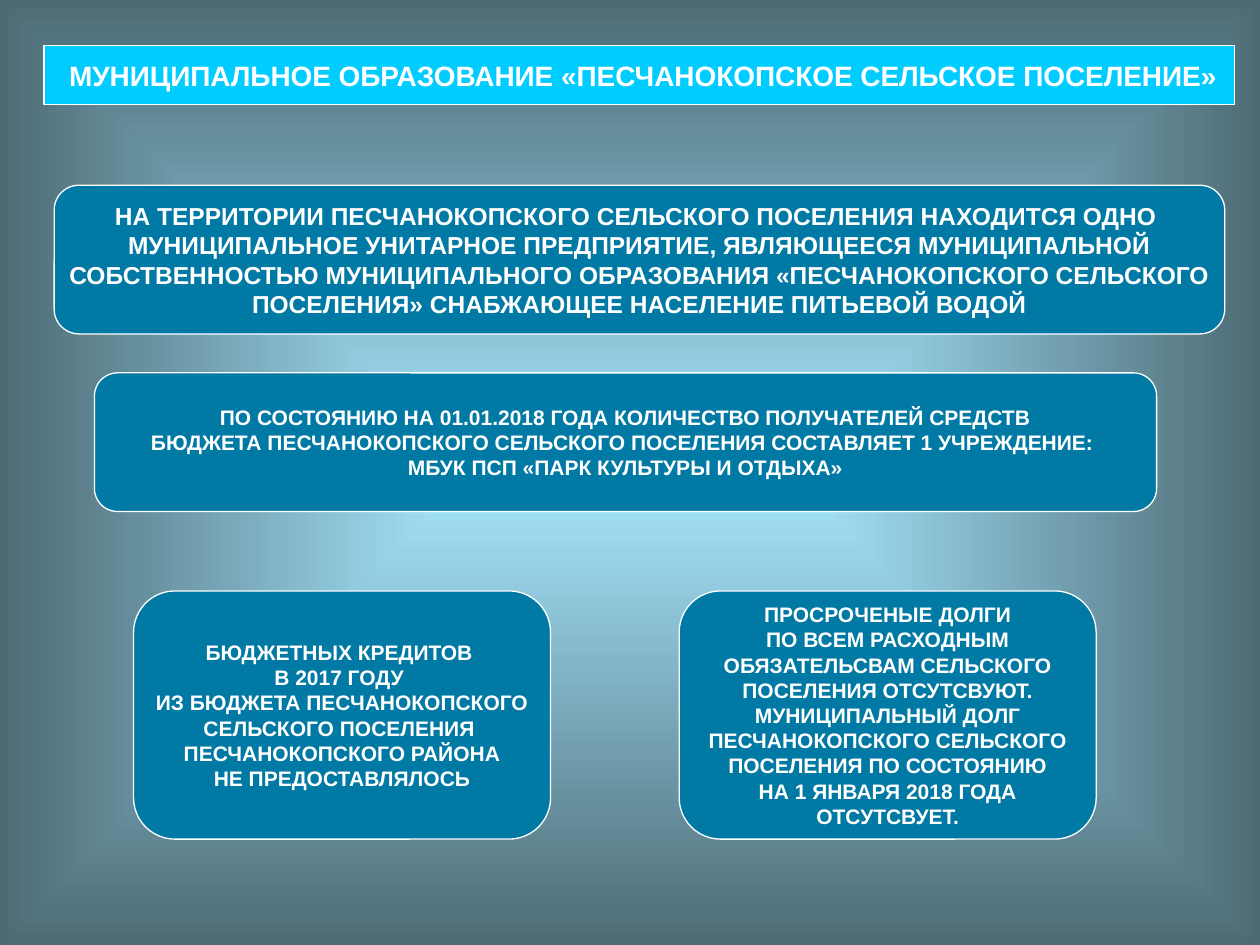
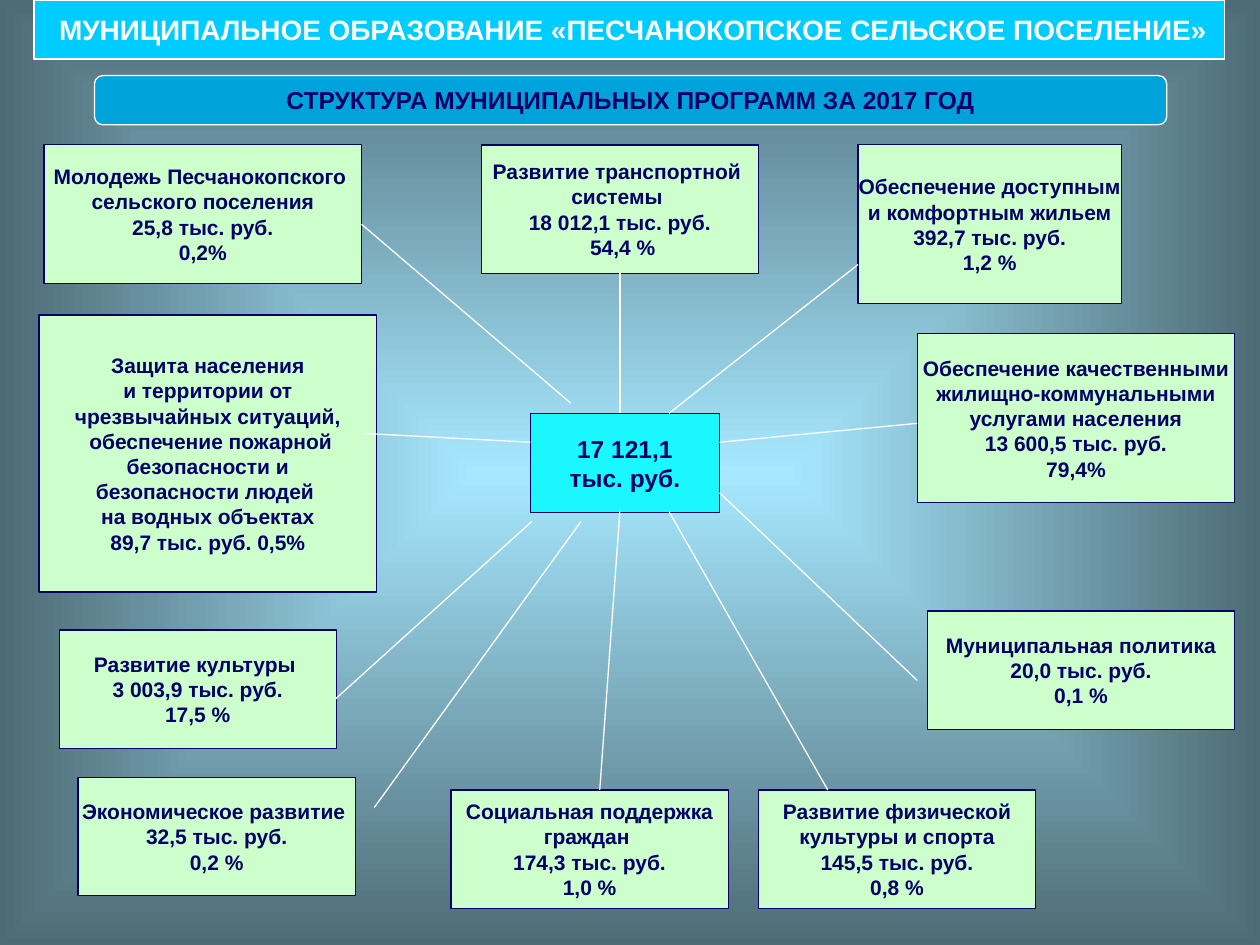
from pptx import Presentation
from pptx.dml.color import RGBColor
from pptx.enum.shapes import MSO_CONNECTOR as Line, MSO_SHAPE as Kind
from pptx.enum.text import MSO_ANCHOR as Anchor, PP_ALIGN as Align
from pptx.oxml.ns import qn
from pptx.util import Inches, Pt
from lxml import etree

HEX = {
    "glow": "A7E8FF", "edge": "4D6B75", "band": "00CCFF", "white": "FFFFFF",
    "fact": "0079A4", "head": "00A2DC", "navy": "000066", "card": "CCFFCC",
    "hub": "1BF8FD",
}
FONT = "Arial"
THIN = Pt(0.75)
TITLE = " МУНИЦИПАЛЬНОЕ ОБРАЗОВАНИЕ «ПЕСЧАНОКОПСКОЕ СЕЛЬСКОЕ ПОСЕЛЕНИЕ»"

# Facts of the first slide
PLANT = """НА ТЕРРИТОРИИ ПЕСЧАНОКОПСКОГО СЕЛЬСКОГО ПОСЕЛЕНИЯ НАХОДИТСЯ ОДНО 
МУНИЦИПАЛЬНОЕ УНИТАРНОЕ ПРЕДПРИЯТИЕ, ЯВЛЯЮЩЕЕСЯ МУНИЦИПАЛЬНОЙ
СОБСТВЕННОСТЬЮ МУНИЦИПАЛЬНОГО ОБРАЗОВАНИЯ «ПЕСЧАНОКОПСКОГО СЕЛЬСКОГО
ПОСЕЛЕНИЯ» СНАБЖАЮЩЕЕ НАСЕЛЕНИЕ ПИТЬЕВОЙ ВОДОЙ"""
FUNDS = """ПО СОСТОЯНИЮ НА 01.01.2018 ГОДА КОЛИЧЕСТВО ПОЛУЧАТЕЛЕЙ СРЕДСТВ
БЮДЖЕТА ПЕСЧАНОКОПСКОГО СЕЛЬСКОГО ПОСЕЛЕНИЯ СОСТАВЛЯЕТ 1 УЧРЕЖДЕНИЕ: 
МБУК ПСП «ПАРК КУЛЬТУРЫ И ОТДЫХА»"""
LOANS = """БЮДЖЕТНЫХ КРЕДИТОВ 
В 2017 ГОДУ 
ИЗ БЮДЖЕТА ПЕСЧАНОКОПСКОГО
СЕЛЬСКОГО ПОСЕЛЕНИЯ 
ПЕСЧАНОКОПСКОГО РАЙОНА
НЕ ПРЕДОСТАВЛЯЛОСЬ"""
DEBTS = """ПРОСРОЧЕНЫЕ ДОЛГИ
ПО ВСЕМ РАСХОДНЫМ
ОБЯЗАТЕЛЬСВАМ СЕЛЬСКОГО
ПОСЕЛЕНИЯ ОТСУТСВУЮТ.
МУНИЦИПАЛЬНЫЙ ДОЛГ
ПЕСЧАНОКОПСКОГО СЕЛЬСКОГО
ПОСЕЛЕНИЯ ПО СОСТОЯНИЮ
НА 1 ЯНВАРЯ 2018 ГОДА
ОТСУТСВУЕТ."""

# Programmes: box, spoke (from x, y, to x, y), text
PLANS = [
    ((0.04, 0, 2.52, 1.1), (2.56, 0.63, 4.22, 2.05),
     "Молодежь Песчанокопского \nсельского поселения\n25,8 тыс. руб.\n0,2%"),
    ((0, 1.35, 2.68, 2.2), (2.58, 2.29, 3.9, 2.36),
     "Защита населения\n и территории от \nчрезвычайных ситуаций,\n"
     " обеспечение пожарной\n безопасности и \nбезопасности людей \n"
     "на водных объектах\n89,7 тыс. руб. 0,5%"),
    ((6.5, 0, 2.09, 1.26), (6.5, 0.95, 5, 2.13),
     "Обеспечение доступным\nи комфортным жильем\n392,7 тыс. руб.\n1,2 %"),
    ((0.16, 3.85, 2.2, 0.94), (2.35, 4.4, 3.91, 2.99),
     "Развитие культуры \n3 003,9 тыс. руб.\n17,5 %"),
    ((6.97, 1.5, 2.52, 1.34), (6.97, 2.21, 5.4, 2.36),
     "Обеспечение качественными\n жилищно-коммунальными \n"
     "услугами населения\n13 600,5 тыс. руб.\n79,4%"),
    ((3.51, 0, 2.2, 1.02), (4.61, 1.02, 4.61, 2.13),
     "Развитие транспортной \nсистемы \n18 012,1 тыс. руб.\n 54,4 %"),
    ((3.27, 5.12, 2.2, 0.94), (4.45, 5.12, 4.61, 2.91),
     "Социальная поддержка\nграждан \n174,3 тыс. руб.\n1,0 %"),
    ((5.71, 5.12, 2.2, 0.94), (6.26, 5.12, 5, 2.91),
     "Развитие физической\nкультуры и спорта\n145,5 тыс. руб.\n0,8 %"),
    ((7.05, 3.7, 2.44, 0.94), (6.97, 4.25, 5.4, 2.76),
     "Муниципальная политика\n20,0 тыс. руб.\n0,1 %"),
    ((0.31, 5.02, 2.2, 0.94), (2.66, 5.26, 4.3, 2.99),
     "Экономическое развитие \n32,5 тыс. руб.\n0,2 %"),
]


def rgb(name):
    return RGBColor.from_string(HEX[name])


def shift(box, x, y):
    return box[0] + x, box[1] + y, box[2], box[3]


def panel(slide, box, text, fill, ink="white", edge="white", size=12,
          kind=Kind.ROUNDED_RECTANGLE):
    """Filled box with centred bold text, one paragraph a line."""
    shape = slide.shapes.add_shape(kind, *map(Inches, box))
    shape.shadow.inherit = False
    shape.fill.solid()
    shape.fill.fore_color.rgb = rgb(fill)
    shape.line.color.rgb = rgb(edge)
    shape.line.width = THIN
    frame = shape.text_frame
    frame.text = text
    frame.word_wrap = False
    frame.vertical_anchor = Anchor.MIDDLE
    for para in frame.paragraphs:
        para.alignment = Align.CENTER
        for run in para.runs:
            run.font.name, run.font.size, run.font.bold = FONT, Pt(size), True
            run.font.color.rgb = rgb(ink)
    return shape


def spoke(slide, ends):
    line = slide.shapes.add_connector(Line.STRAIGHT, *map(Inches, ends))
    line.line.color.rgb = rgb("white")
    line.line.width = THIN
    etree.SubElement(line.element.spPr, qn("a:effectLst"))
    return line


def glow(slide):
    """Background that darkens from the centre to the edges."""
    fill = slide.background.fill
    fill.gradient()
    for stop, name in zip(fill.gradient_stops, ("glow", "edge")):
        stop.color.rgb = rgb(name)
    grad = slide.element.find(".//" + qn("a:gradFill"))
    grad.remove(grad.find(qn("a:lin")))
    path = etree.SubElement(grad, qn("a:path"), {"path": "shape"})
    half = dict.fromkeys("ltrb", "50000")
    etree.SubElement(path, qn("a:fillToRect"), half)


def start(deck, x, y):
    """New slide with the background and the title band."""
    slide = deck.slides.add_slide(deck.slide_layouts[6])
    glow(slide)
    panel(slide, (x, y, 9.45, 0.47), TITLE, "band", size=16,
          kind=Kind.RECTANGLE)
    return slide


def facts(slide, x, y):
    # Wide rows
    panel(slide, (x, y, 9.29, 1.18), PLANT, "fact", size=14)
    panel(slide, (x + 0.32, y + 1.49, 8.43, 1.1), FUNDS, "fact")
    # Pair below
    for col, text in enumerate((LOANS, DEBTS)):
        box = (x + 0.63 + 4.33 * col, y + 3.22, 3.31, 1.97)
        panel(slide, box, text, "fact")


def wheel(slide, x, y):
    # Total in the middle
    panel(slide, shift((3.9, 2.13, 1.5, 0.79), x, y), "17 121,1\nтыс. руб.",
          "hub", "navy", "navy", 14, Kind.RECTANGLE)
    # Programmes and their spokes
    for box, (x1, y1, x2, y2), text in PLANS:
        card = panel(slide, shift(box, x, y), text, "card", "navy", "navy",
                     kind=Kind.RECTANGLE)
        line = spoke(slide, (x + x1, y + y1, x + x2, y + y2))
        left, top, wide, high = box
        if abs(x1 - left - wide / 2) < 0.01 and abs(y1 - top - high) < 0.01:
            line.begin_connect(card, 2)


def main():
    deck = Presentation()
    deck.slide_width, deck.slide_height = Inches(10), Inches(7.5)

    facts(start(deck, 0.35, 0.36), 0.43, 1.47)

    slide = start(deck, 0.27, 0)
    panel(slide, (0.75, 0.6, 8.51, 0.39),
          "СТРУКТУРА МУНИЦИПАЛЬНЫХ ПРОГРАММ ЗА 2017 ГОД",
          "head", "navy", size=14)
    wheel(slide, 0.31, 1.15)

    deck.save("out.pptx")


if __name__ == "__main__":
    main()
